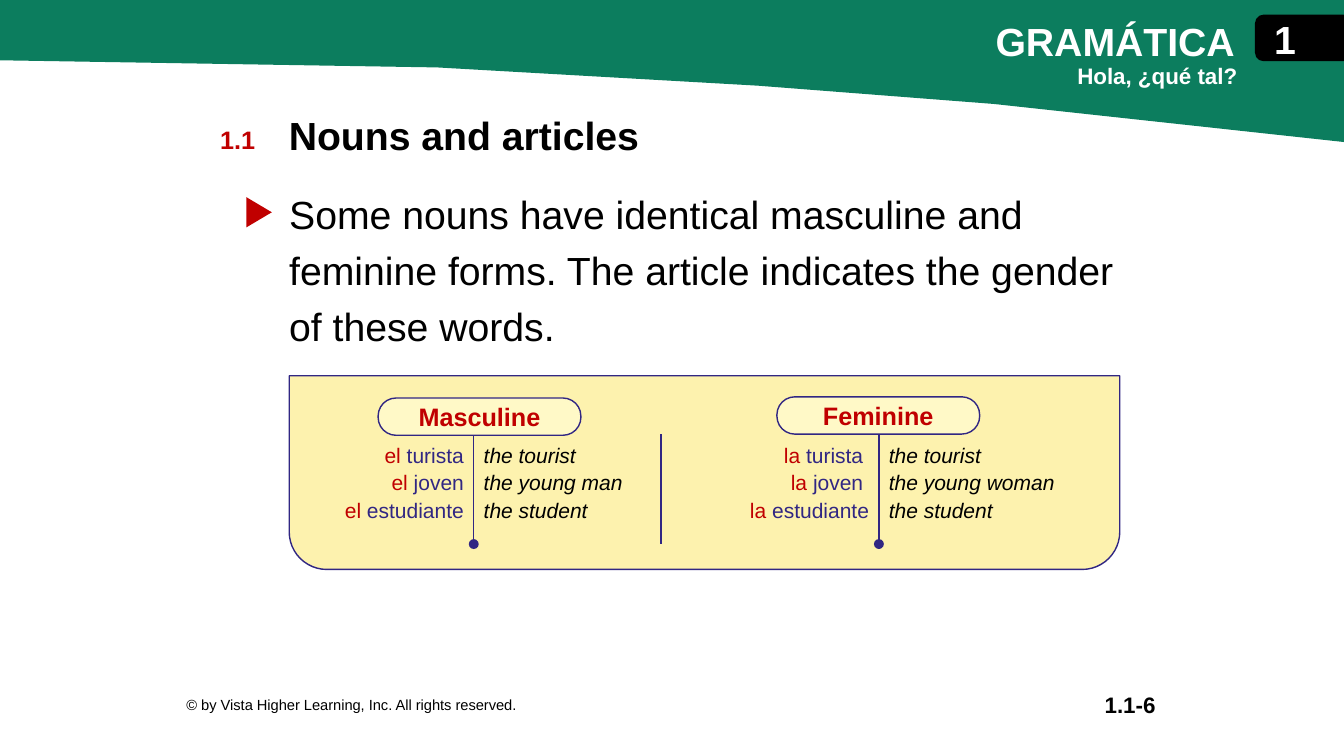
from lxml import etree
from pptx import Presentation
from pptx import util as u
from pptx.dml.color import RGBColor
from pptx.enum import shapes, text
from pptx.oxml import ns

Cm, Pt = u.Cm, u.Pt
SHAPE, ALIGN, ANCHOR = shapes.MSO_SHAPE, text.PP_ALIGN, text.MSO_ANCHOR
GREEN, RED, NAVY = "0C7D5E", "C00000", "312783"
YELLOW, CREAM, BLACK, WHITE = "FDF2AE", "FFF9C7", "000000", "FFFFFF"
NO_STYLE_NO_GRID = "{2D5ABB26-0587-4C30-8999-92F81FD0307C}"


def rgb(color):
    return RGBColor.from_string(color)


def paint(shape, fill, line=None):
    shape.shadow.inherit = False
    shape.fill.solid()
    shape.fill.fore_color.rgb = rgb(fill)
    if line:
        shape.line.color.rgb = rgb(line)
        shape.line.width = Pt(1)
    else:
        shape.line.fill.background()


def add_preset(slide, kind, box, fill, line=None, adjustments=(), rotation=0):
    shape = slide.shapes.add_shape(kind, *map(Cm, box))
    paint(shape, fill, line)
    for index, value in enumerate(adjustments):
        shape.adjustments[index] = value
    shape.rotation = rotation
    return shape


def write(shape, words, size, color=BLACK, bold=False, align=ALIGN.LEFT,
          anchor=ANCHOR.TOP, wrap=True):
    frame = shape.text_frame
    frame.word_wrap = wrap
    frame.vertical_anchor = anchor
    paragraph = frame.paragraphs[0]
    paragraph.text = words
    paragraph.alignment = align
    style_font(paragraph.font, size, color, bold)
    return paragraph


def style_font(font, size, color, bold=False, italic=False):
    font.name = "Arial"
    font.size = Pt(size)
    font.bold = bold
    font.italic = italic
    font.color.rgb = rgb(color)


def add_label(slide, box, words, size, **style):
    return write(slide.shapes.add_textbox(*map(Cm, box)), words, size, **style)


def add_header(slide, box):
    left, top, width, height = box
    edge = [(25.04, 2.62), (19.1, 2.16), (11.02, 1.7), (0, 1.52), (0, 0), (width, 0)]
    builder = slide.shapes.build_freeform(Cm(left + width), Cm(top + height))
    builder.add_line_segments([(Cm(left + x), Cm(top + y)) for x, y in edge])
    paint(builder.convert_to_shape(), GREEN)

    right = left + width
    add_label(slide, (right - 9.03, top + 0.3, 9.03, 1.45), "GRAMÁTICA", 28,
              color=WHITE, bold=True)
    add_label(slide, (right - 6.97, top + 1.45, 4.62, 0.94), "Hola, ¿qué tal?", 16,
              color=WHITE, bold=True, wrap=False)
    add_preset(slide, SHAPE.ROUND_2_SAME_RECTANGLE, (right - 1.69, top - 0.15, 1.14, 2.21),
               BLACK, BLACK, (0.178, 0), rotation=270)
    add_label(slide, (right - 2.01, top + 0.46, 0.89, 1.02), "1", 28, color=WHITE,
              bold=True, align=ALIGN.CENTER, anchor=ANCHOR.MIDDLE, wrap=False)


def add_heading(slide, box):
    left, top, width, height = box
    number_width = 2.08
    add_label(slide, (left, top + 0.33, number_width, 1.02), "1.1", 18, color=RED,
              bold=True, align=ALIGN.CENTER, anchor=ANCHOR.MIDDLE)
    add_label(slide, (left + number_width, top, width - number_width, height),
              "Nouns and articles", 28, bold=True)


def add_rule(slide, box):
    """Place the grammar rule with its triangular marker."""
    left, top = box[:2]
    add_preset(slide, SHAPE.ISOSCELES_TRIANGLE, (left + 0.38, top + 0.58, 0.76, 0.64),
               RED, rotation=90)
    paragraph = add_label(
        slide, box, "Some nouns have identical masculine and feminine forms. "
        "The article indicates the gender of these words.", 28)
    properties = paragraph._p.get_or_add_pPr()
    properties.set("marL", str(Cm(1.27)))
    properties.set("indent", "0")
    paragraph.line_spacing = Pt(40)


def add_left_border(cell, color):
    properties = cell._tc.get_or_add_tcPr()
    border = etree.Element(ns.qn("a:lnL"), w=str(Pt(1)))
    fill = etree.SubElement(border, ns.qn("a:solidFill"))
    etree.SubElement(fill, ns.qn("a:srgbClr"), val=color)
    properties.insert(0, border)


def fill_cell(cell, lines, align, bottom):
    """Write lines, each a list of (words, color, italic) runs."""
    cell.fill.background()
    cell.margin_left = cell.margin_right = cell.margin_top = Cm(0.25)
    cell.margin_bottom = Cm(bottom)
    for index, runs in enumerate(lines):
        frame = cell.text_frame
        paragraph = frame.paragraphs[0] if index == 0 else frame.add_paragraph()
        paragraph.alignment = align
        paragraph.space_after = Pt(3)
        for words, color, italic in runs:
            run = paragraph.add_run()
            run.text = words
            style_font(run.font, 15, color, italic=italic)


def add_noun_panel(slide, box):
    left, top, width, height = box
    add_preset(slide, SHAPE.ROUND_2_SAME_RECTANGLE, box, YELLOW, NAVY, (0, 0.194))

    table_left, table_top, table_height = left - 0.25, top + 1.47, 2.77
    column_widths = [4.9, 4.72, 5.49, 6.45]
    frame = slide.shapes.add_table(1, 4, Cm(table_left), Cm(table_top),
                                   Cm(sum(column_widths)), Cm(table_height))
    table = frame.table
    table.first_row = table.horz_banding = False
    table._tbl.tblPr.find(ns.qn("a:tableStyleId")).text = NO_STYLE_NO_GRID
    for column, column_width in zip(table.columns, column_widths):
        column.width = Cm(column_width)

    genders = [
        ("Masculine", 2.24, 0.56, 0, "el",
         [" turista", " joven", " estudiante"],
         ["the tourist", "the young man", "the student"]),
        ("Feminine", 12.29, 0.53, 0.13, "la",
         [" turista ", " joven ", " estudiante"],
         ["the tourist", "the young woman", "the student"]),
    ]
    dot = 0.25
    for index, (gender, x, y, bottom, article, nouns, meanings) in enumerate(genders):
        first = 2 * index
        fill_cell(table.cell(0, first),
                  [[(article, RED, False), (noun, NAVY, False)] for noun in nouns],
                  ALIGN.RIGHT, bottom)
        meaning_cell = table.cell(0, first + 1)
        fill_cell(meaning_cell, [[(meaning, BLACK, True)] for meaning in meanings],
                  ALIGN.LEFT, bottom)
        add_left_border(meaning_cell, NAVY)

        pill = add_preset(slide, SHAPE.ROUNDED_RECTANGLE, (left + x, top + y, 5.11, 0.94),
                          CREAM, NAVY, (0.481,))
        write(pill, gender, 18, color=RED, bold=True, align=ALIGN.CENTER,
              anchor=ANCHOR.MIDDLE)
        divider = table_left + sum(column_widths[:first + 1])
        add_preset(slide, SHAPE.OVAL, (divider - dot / 2, table_top + table_height - dot / 2,
                                       dot, dot), NAVY)


def add_footer(slide, box):
    left, top, width, height = box
    page_width = 7.65
    add_label(slide, (left + width - page_width, top, page_width, height), "1.1-6", 16,
              bold=True, align=ALIGN.RIGHT, anchor=ANCHOR.MIDDLE)
    add_label(slide, (left, top, 16.38, height),
              "© by Vista Higher Learning, Inc. All rights reserved.", 10.5,
              anchor=ANCHOR.MIDDLE)


def main():
    presentation = Presentation()
    presentation.slide_width, presentation.slide_height = Cm(33.87), Cm(19.05)
    slide = presentation.slides.add_slide(presentation.slide_layouts[6])
    add_header(slide, (0, 0, 33.87, 3.58))
    add_heading(slide, (4.95, 2.67, 23.11, 1.45))
    add_rule(slide, (5.77, 4.45, 22.86, 4.37))
    add_noun_panel(slide, (7.29, 9.47, 20.93, 4.88))
    add_footer(slide, (4.45, 17.32, 24.92, 0.89))
    presentation.save("out.pptx")


if __name__ == "__main__":
    main()
